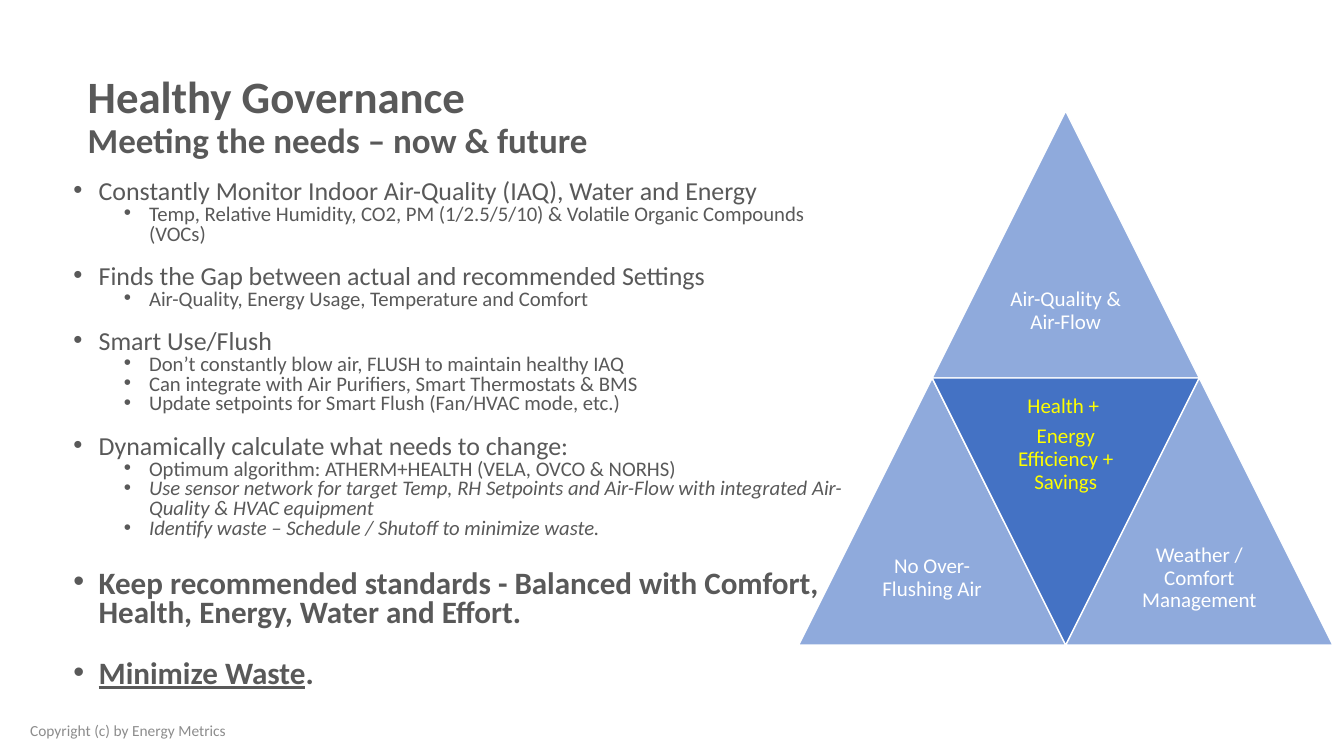
from lxml.etree import SubElement
from pptx import Presentation
from pptx.dml.color import RGBColor
from pptx.enum.shapes import MSO_SHAPE
from pptx.enum.text import MSO_ANCHOR, MSO_AUTO_SIZE, PP_ALIGN
from pptx.oxml.ns import qn
from pptx.util import Inches, Pt

# Content
TITLE = ("Healthy Governance", "Meeting the needs – now & future")
FOOTER = "Copyright (c) by Energy Metrics"
TOPICS = [
    ("Constantly Monitor Indoor Air-Quality (IAQ), Water and Energy", [
        "Temp, Relative Humidity, CO2, PM (1/2.5/5/10) & Volatile Organic Compounds (VOCs)"]),
    ("Finds the Gap between actual and recommended Settings", [
        "Air-Quality, Energy Usage, Temperature and Comfort"]),
    ("Smart Use/Flush", [
        "Don’t constantly blow air, FLUSH to maintain healthy IAQ",
        "Can integrate with Air Purifiers, Smart Thermostats & BMS",
        "Update setpoints for Smart Flush (Fan/HVAC mode, etc.)"]),
    ("Dynamically calculate what needs to change:", [
        "Optimum algorithm: ATHERM+HEALTH (VELA, OVCO & NORHS)",
        "Use sensor network for target Temp, RH Setpoints and Air-Flow with integrated "
        "Air-Quality & HVAC equipment",
        "Identify waste – Schedule / Shutoff to minimize waste."]),
]
ITALIC_STARTS = ("Use sensor", "Identify waste")
# Each conclusion is a list of (text, underlined)
CONCLUSIONS = [
    [("Keep recommended standards - Balanced with Comfort, Health, Energy, Water and Effort.", False)],
    [("Minimize Waste", True), (".", False)],
]
# Column and row in half triangles, fill, text colour, upside down, lines
TRIANGLES = [
    (1, 0, "light", "white", False, ["Air-Quality & Air-Flow"]),
    (0, 2, "light", "white", False, ["No Over-Flushing Air"]),
    (1, 2, "dark", "yellow", True, ["Health + ", "Energy Efficiency + Savings"]),
    (2, 2, "light", "white", False, ["Weather / Comfort Management"]),
]
COLORS = {"text": "595959", "footer": "8C8C8C", "light": "8FAADC",
          "dark": "4472C4", "white": "FFFFFF", "yellow": "FFFF00"}
FONT = "Calibri"
PYRAMID_LEFT, PYRAMID_TOP, SIDE = 7.92, 1.1, 2.65
TOPIC_SIZE, DETAIL_SIZE, CONCLUSION_SIZE = 18.5, 14.8, 22.2
BLANK_LINE = 0.98  # height of a skipped line as a share of its font size


def color(name):
    return RGBColor.from_string(COLORS[name])


def style(font, size, color_name, bold=False, italic=False):
    font.name, font.size, font.bold, font.italic = FONT, Pt(size), bold, italic
    font.color.rgb = color(color_name)


def add_text_box(shapes, left, top, width, height, anchor, inset=None):
    box = shapes.add_textbox(*map(Inches, (left, top, width, height)))
    frame = box.text_frame
    frame.word_wrap = True
    frame.auto_size = MSO_AUTO_SIZE.NONE
    frame.vertical_anchor = anchor
    if inset is not None:
        frame.margin_left = frame.margin_right = Inches(inset)
        frame.margin_top = frame.margin_bottom = Inches(inset)
    return frame


def next_paragraph(frame):
    first = frame.paragraphs[0]
    return frame.add_paragraph() if first.runs else first


def add_bullet(frame, runs, size, indent, gap=0, bold=False, italic=False):
    paragraph = next_paragraph(frame)
    properties = paragraph._p.get_or_add_pPr()
    properties.set("marL", str(Inches(indent)))
    properties.set("indent", str(Inches(-0.25)))
    paragraph.level = 1 if indent > 0.5 else 0
    paragraph.line_spacing = 0.8
    if gap:
        paragraph.space_before = Pt(gap)
    SubElement(properties, qn("a:buFont"), typeface="Arial")
    SubElement(properties, qn("a:buChar"), char="•")
    style(paragraph.font, size, "text", bold, italic)
    for text, underlined in runs:
        run = paragraph.add_run()
        run.text = text
        if underlined:
            run.font.underline = True


presentation = Presentation()
presentation.slide_width, presentation.slide_height = Inches(13.33), Inches(7.5)
slide = presentation.slides.add_slide(presentation.slide_layouts[5])

# Footer
paragraph = add_text_box(slide.shapes, 0.2, 7.11, 4.5, 0.28, MSO_ANCHOR.MIDDLE).paragraphs[0]
paragraph.text = FOOTER
style(paragraph.font, 11, "footer")

# Title
title = slide.shapes.title
title.left, title.top, title.width, title.height = map(Inches, (0.77, 0.6, 11.5, 1.14))
title.text_frame.vertical_anchor = MSO_ANCHOR.MIDDLE
title.text_frame.auto_size = MSO_AUTO_SIZE.NONE
paragraph = title.text_frame.paragraphs[0]
paragraph.alignment = PP_ALIGN.LEFT
paragraph.line_spacing = 0.9
style(paragraph.font, 32, "text", bold=True)
paragraph.add_run().text = TITLE[0]
paragraph.add_line_break()
SubElement(paragraph._p.find(qn("a:br")), qn("a:rPr"), sz="3200")
subtitle = paragraph.add_run()
subtitle.text = TITLE[1]
subtitle.font.size = Pt(25)

# Pyramid of four triangles, each with a label in its widest part
half = SIDE / 2
pyramid = slide.shapes.add_group_shape()
for column, row, fill, text_color, inverted, lines in TRIANGLES:
    left, top = PYRAMID_LEFT + column * half, PYRAMID_TOP + row * half
    triangle = pyramid.shapes.add_shape(
        MSO_SHAPE.ISOSCELES_TRIANGLE, *map(Inches, (left, top, SIDE, SIDE)))
    triangle.rotation = 180 if inverted else 0
    triangle.shadow.inherit = False
    triangle.fill.solid()
    triangle.fill.fore_color.rgb = color(fill)
    triangle.line.color.rgb = color("white")
    triangle.line.width = Pt(1)
    label_top = top if inverted else top + half
    frame = add_text_box(pyramid.shapes, left + half / 2, label_top, half, half,
                         MSO_ANCHOR.MIDDLE, 0.06)
    for line in lines:
        paragraph = next_paragraph(frame)
        paragraph.text = line
        paragraph.alignment = PP_ALIGN.CENTER
        paragraph.line_spacing = 0.9
        paragraph.space_after = Pt(5.25)
        style(paragraph.font, 15, text_color)

# Bullets
body = add_text_box(slide.shapes, 0.63, 1.74, 7.89, 5.35, MSO_ANCHOR.TOP)
for index, (topic, details) in enumerate(TOPICS):
    add_bullet(body, [(topic, False)], TOPIC_SIZE, 0.25,
               gap=DETAIL_SIZE * BLANK_LINE if index else 0)
    for detail in details:
        add_bullet(body, [(detail, False)], DETAIL_SIZE, 0.75,
                   italic=detail.startswith(ITALIC_STARTS))
for runs in CONCLUSIONS:
    add_bullet(body, runs, CONCLUSION_SIZE, 0.25, gap=CONCLUSION_SIZE * BLANK_LINE, bold=True)

presentation.save("out.pptx")
